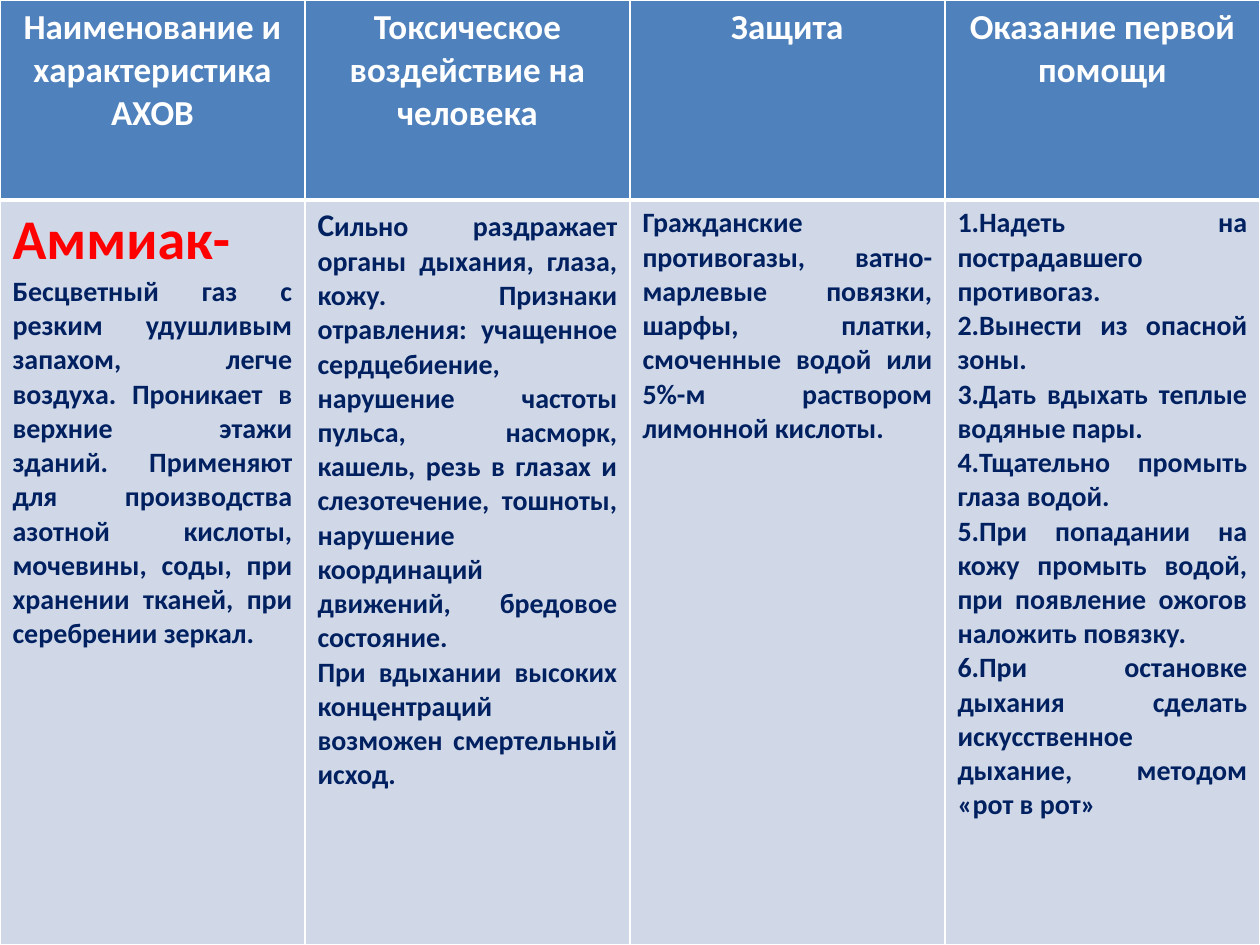
from dataclasses import dataclass

from lxml.etree import SubElement
from pptx import Presentation
from pptx.dml.color import RGBColor
from pptx.enum.text import PP_ALIGN
from pptx.oxml import parse_xml
from pptx.oxml.ns import nsdecls, qn
from pptx.util import Emu, Pt

PX_PER_INCH = 126
FONT = "Calibri"
WHITE, BLUE, PALE, NAVY, RED = "FFFFFF", "4F81BD", "D0D8E8", "002060", "FF0000"
OUTLINE = "054697"
COLUMN_WIDTHS = (305, 325, 315, 315)
ROW_HEIGHTS = (200, 745)


@dataclass(frozen=True)
class Paragraph:
    text: str
    size: int = 16
    color: str = NAVY
    align: PP_ALIGN = PP_ALIGN.JUSTIFY
    initial_size: int = 0
    outline: str = ""


@dataclass(frozen=True)
class CellStyle:
    fill: str
    top: int
    bottom: int


HEADER_STYLE = CellStyle(BLUE, top=1, bottom=3)
BODY_STYLE = CellStyle(PALE, top=3, bottom=1)

HEADINGS = (
    "Наименование и характеристика АХОВ",
    "Токсическое воздействие на человека",
    "Защита",
    "Оказание первой помощи",
)

DETAILS = (
    (
        Paragraph("Аммиак-", size=32, color=RED, outline=OUTLINE),
        Paragraph(
            "Бесцветный газ с резким удушливым запахом, легче воздуха. "
            "Проникает в верхние этажи зданий. Применяют для производства "
            "азотной кислоты, мочевины, соды, при хранении тканей, "
            "при серебрении зеркал."
        ),
    ),
    (
        Paragraph(
            "Сильно раздражает органы дыхания, глаза, кожу. Признаки отравления: "
            "учащенное сердцебиение, нарушение частоты пульса, насморк, кашель, "
            "резь в глазах и слезотечение, тошноты, нарушение координаций "
            "движений, бредовое состояние.",
            initial_size=18,
        ),
        Paragraph("При вдыхании высоких концентраций возможен смертельный исход."),
    ),
    (
        Paragraph(
            "Гражданские противогазы, ватно-марлевые повязки, шарфы, платки, "
            "смоченные водой или 5%-м раствором лимонной кислоты."
        ),
    ),
    (
        Paragraph("1.Надеть на пострадавшего противогаз."),
        Paragraph("2.Вынести из опасной зоны."),
        Paragraph("3.Дать вдыхать теплые водяные пары."),
        Paragraph("4.Тщательно промыть глаза водой."),
        Paragraph(
            "5.При попадании на кожу промыть водой, "
            "при появление ожогов наложить повязку."
        ),
        Paragraph(
            "6.При остановке дыхания сделать искусственное дыхание, "
            "методом «рот в рот»"
        ),
    ),
)


def px(length: int) -> Emu:
    """Turn whole pixels into EMU."""
    return Emu(round(length * 914400 / PX_PER_INCH))


def rgb(color: str) -> RGBColor:
    """Turn a hex string into a colour."""
    return RGBColor.from_string(color)


def outline_span(span, color: str) -> None:
    """Give a run of text a thin outline."""
    line = parse_xml(f'<a:ln {nsdecls("a")} w="{Pt(0.75)}"/>')
    fill = SubElement(line, qn("a:solidFill"))
    SubElement(fill, qn("a:srgbClr"), val=color)
    span.font.fill.solid()
    span.font.fill.fore_color.rgb = rgb(RED)
    span.font._element.insert(0, line)


def write_paragraph(para, content: Paragraph) -> None:
    """Write and format one paragraph."""
    para.alignment = content.align
    para.font.name = FONT
    para.font.bold = True
    para.font.size = Pt(content.size)
    para.font.color.rgb = rgb(content.color)
    text = content.text
    if content.initial_size:
        initial = para.add_run()
        initial.text, text = text[0], text[1:]
        initial.font.size = Pt(content.initial_size)
    span = para.add_run()
    span.text = text
    if content.outline:
        outline_span(span, content.outline)


def style_cell(cell, style: CellStyle) -> None:
    """Fill a cell and draw its four white borders."""
    cell.fill.solid()
    cell.fill.fore_color.rgb = rgb(style.fill)
    properties = cell._tc.get_or_add_tcPr()
    widths = {"lnL": 1, "lnR": 1, "lnT": style.top, "lnB": style.bottom}
    for index, (side, width) in enumerate(widths.items()):
        border = parse_xml(f'<a:{side} {nsdecls("a")} w="{Pt(width)}"/>')
        fill = SubElement(border, qn("a:solidFill"))
        SubElement(fill, qn("a:srgbClr"), val=WHITE)
        properties.insert(index, border)


def write_cell(cell, contents: tuple[Paragraph, ...], style: CellStyle) -> None:
    """Style a cell and write its paragraphs."""
    style_cell(cell, style)
    frame = cell.text_frame
    for index, content in enumerate(contents):
        para = frame.add_paragraph() if index else frame.paragraphs[0]
        write_paragraph(para, content)


def main() -> None:
    """Build the slide with the hazard table."""
    deck = Presentation()
    deck.slide_width = px(sum(COLUMN_WIDTHS))
    deck.slide_height = px(sum(ROW_HEIGHTS))
    page = deck.slides.add_slide(deck.slide_layouts[6])
    table = page.shapes.add_table(
        len(ROW_HEIGHTS), len(COLUMN_WIDTHS), 0, 0, deck.slide_width, deck.slide_height
    ).table
    for column, width in zip(table.columns, COLUMN_WIDTHS):
        column.width = px(width)
    for row, height in zip(table.rows, ROW_HEIGHTS):
        row.height = px(height)
    for index, (heading, details) in enumerate(zip(HEADINGS, DETAILS)):
        title = Paragraph(heading, size=20, color=WHITE, align=PP_ALIGN.CENTER)
        write_cell(table.cell(0, index), (title,), HEADER_STYLE)
        write_cell(table.cell(1, index), details, BODY_STYLE)
    deck.save("out.pptx")


if __name__ == "__main__":
    main()
